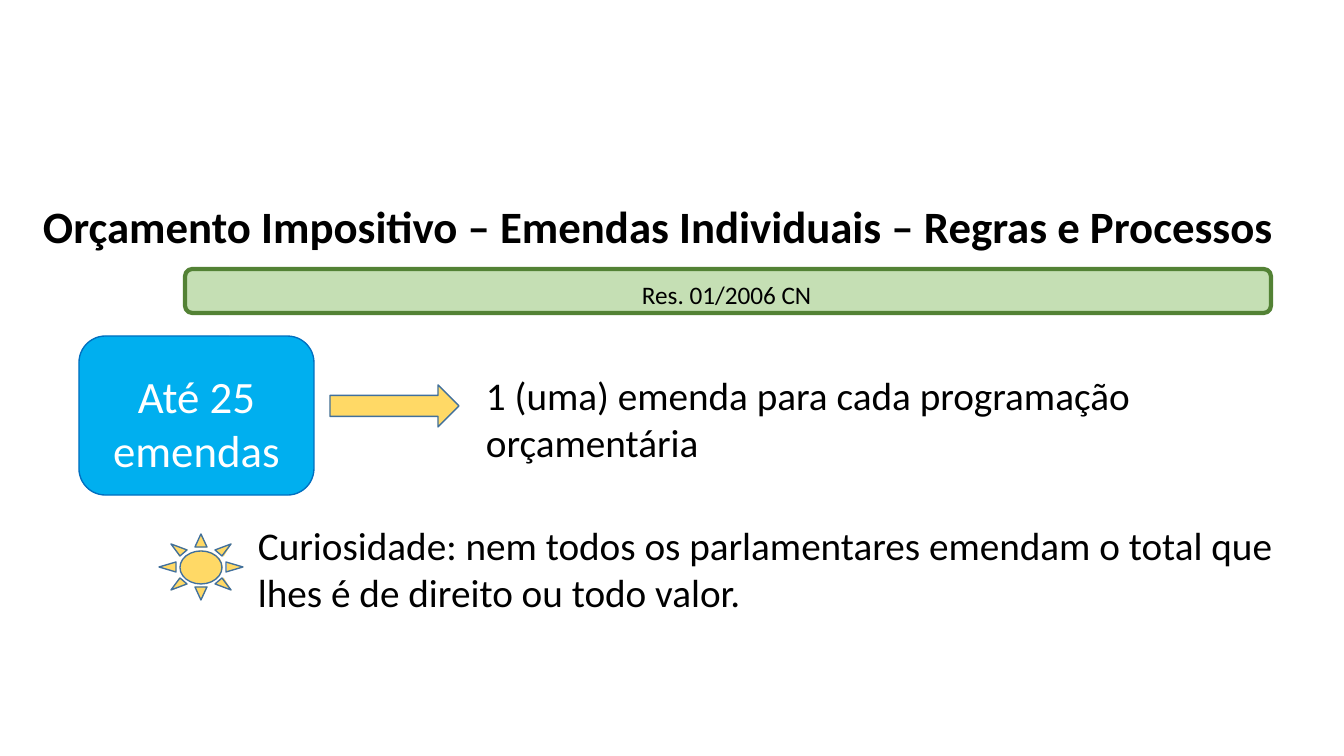
import pptx
import pptx.dml.color
import pptx.enum.shapes
import pptx.enum.text
import pptx.util

RGB = pptx.dml.color.RGBColor
KIND = pptx.enum.shapes.MSO_SHAPE
ALIGN = pptx.enum.text.PP_ALIGN

BLACK = RGB(0x00, 0x00, 0x00)
WHITE = RGB(0xFF, 0xFF, 0xFF)
PALE_GREEN = RGB(0xC5, 0xDF, 0xB4)
GREEN = RGB(0x53, 0x82, 0x35)
SKY = RGB(0x00, 0xAF, 0xEF)
BLUE = RGB(0x00, 0x6F, 0xC0)
YELLOW = RGB(0xFF, 0xD9, 0x66)
STEEL = RGB(0x41, 0x70, 0x9C)

PX_PER_INCH = 100.8
SLIDE_SIZE = (1344, 756)
FONT = "Calibri"
THIN = 0.96

# kind, (left, top, width, height), fill, line colour, line width
SHAPES = [
    (KIND.ROUNDED_RECTANGLE, (185, 269, 1086, 44), PALE_GREEN, GREEN, 3),
    (KIND.ROUNDED_RECTANGLE, (79, 336, 235, 159), SKY, BLUE, THIN),
    (KIND.RIGHT_ARROW, (330, 385, 129, 42), YELLOW, STEEL, THIN),
    (KIND.SUN, (159, 534, 85, 66), YELLOW, None, None),
    (KIND.OVAL, (180, 551, 42, 33), None, STEEL, THIN),
]

# Corners of the sun's rays, measured from its centre
SUN_CENTER = (201, 567)
SIDE_RAY = [(42, 0), (25, 5), (25, -5)]
TOP_RAY = [(0, -33), (6, -20), (-6, -20)]
CORNER_RAY = [(30, -23), (21, -11), (14, -17)]
# ray, its mirrorings (horizontal, vertical)
RAYS = [
    (SIDE_RAY, [(1, 1), (-1, 1)]),
    (TOP_RAY, [(1, 1), (1, -1)]),
    (CORNER_RAY, [(1, 1), (-1, 1), (-1, -1), (1, -1)]),
]

# (left, top, width, height), paragraphs, format
TEXTS = [
    ((43, 199, 1260, 54),
     ["Orçamento Impositivo – Emendas Individuais – Regras e Processos"],
     {"size": 32, "bold": True}),
    ((642, 279, 176, 28), ["Res. 01/2006 CN"], {"size": 18}),
    ((112, 369, 169, 102), ["Até 25", "emendas"],
     {"size": 32, "color": WHITE, "align": ALIGN.CENTER}),
    ((486, 371, 650, 89), ["1 (uma) emenda para cada programação orçamentária"],
     {"size": 28}),
    ((258, 521, 1030, 89),
     ["Curiosidade: nem todos os parlamentares emendam o total que",
      "lhes é de direito ou todo valor."],
     {"size": 28}),
]


def px(length):
    return pptx.util.Emu(round(length * 914400 / PX_PER_INCH))


def paint(shape, fill, line, line_width):
    shape.shadow.inherit = False
    if fill is None:
        shape.fill.background()
    else:
        shape.fill.solid()
        shape.fill.fore_color.rgb = fill
    if line is None:
        shape.line.fill.background()
    else:
        shape.line.color.rgb = line
        shape.line.width = pptx.util.Pt(line_width)


def add_ray(page, corners, flip_x, flip_y):
    points = [(px(SUN_CENTER[0] + flip_x * x), px(SUN_CENTER[1] + flip_y * y))
              for x, y in corners]
    builder = page.shapes.build_freeform(*points[0])
    builder.add_line_segments(points[1:], close=True)
    paint(builder.convert_to_shape(), None, STEEL, THIN)


def add_text(page, place, lines, size, color=BLACK, bold=False,
             align=ALIGN.LEFT):
    """Add a text box without margins, one paragraph for each line."""
    box = page.shapes.add_textbox(*map(px, place))
    frame = box.text_frame
    frame.word_wrap = True
    frame.margin_left = frame.margin_right = 0
    frame.margin_top = frame.margin_bottom = 0
    for index, line in enumerate(lines):
        para = frame.add_paragraph() if index else frame.paragraphs[0]
        para.alignment = align
        para.space_before = pptx.util.Pt(0 if index else 1)
        span = para.add_run()
        span.text = line
        span.font.name = FONT
        span.font.size = pptx.util.Pt(size)
        span.font.bold = bold
        span.font.color.rgb = color


def main():
    deck = pptx.Presentation()
    deck.slide_width, deck.slide_height = map(px, SLIDE_SIZE)
    page = deck.slides.add_slide(deck.slide_layouts[6])
    for kind, place, *colors in SHAPES:
        paint(page.shapes.add_shape(kind, *map(px, place)), *colors)
    for corners, flips in RAYS:
        for flip in flips:
            add_ray(page, corners, *flip)
    for place, lines, style in TEXTS:
        add_text(page, place, lines, **style)
    deck.save("out.pptx")


if __name__ == "__main__":
    main()
